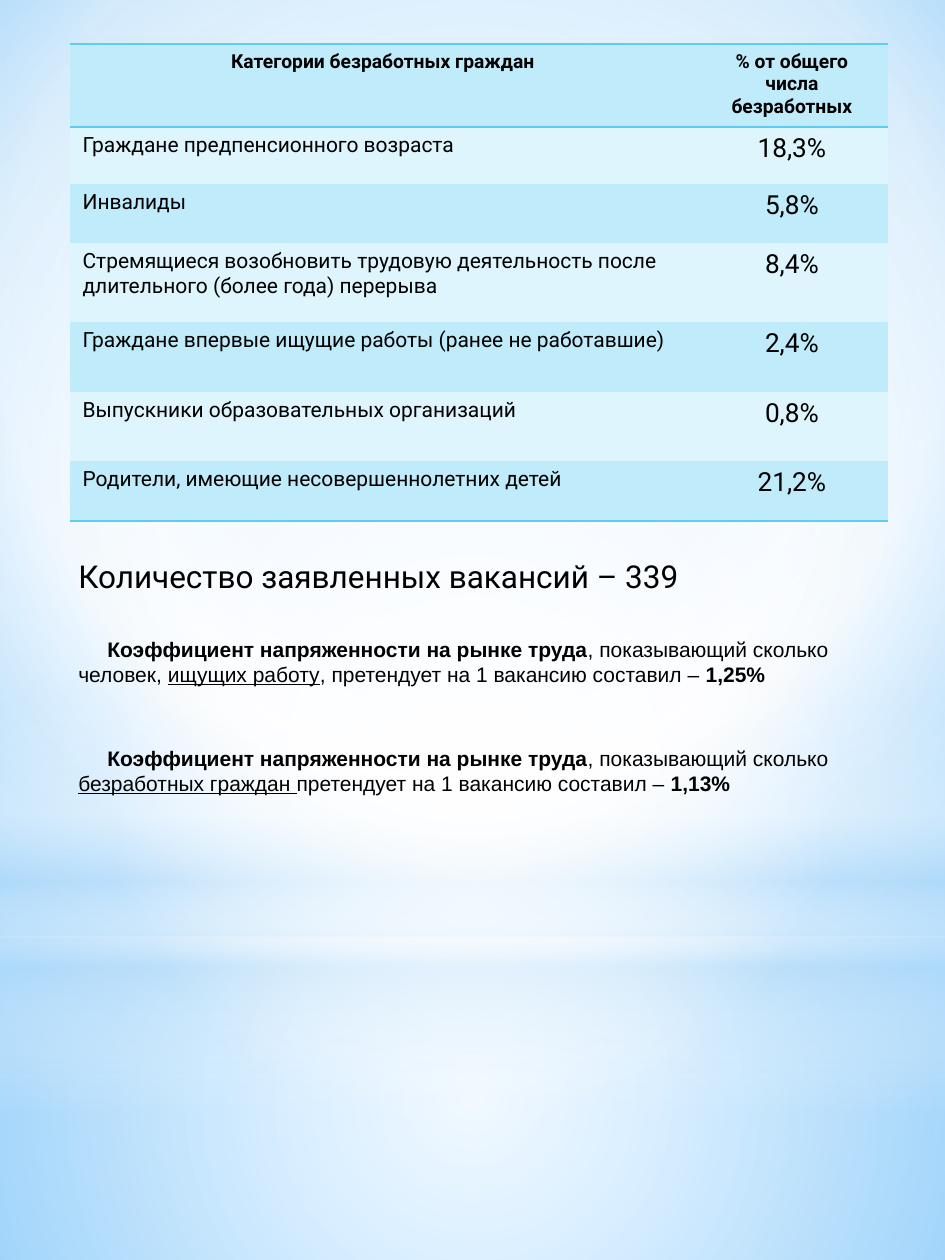
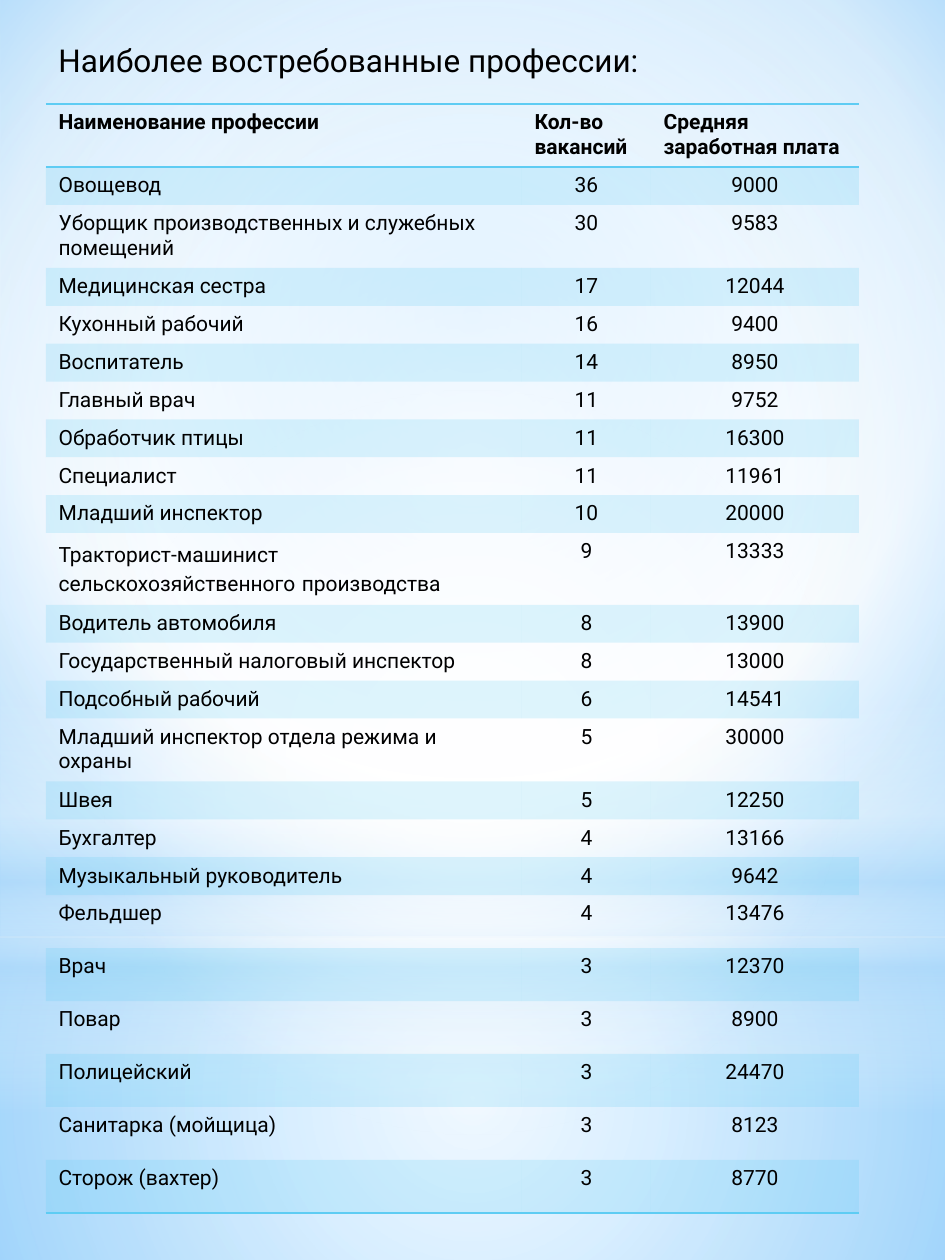
from dataclasses import dataclass

from lxml import etree
from pptx import Presentation
from pptx.dml.color import RGBColor
from pptx.enum.shapes import MSO_SHAPE
from pptx.enum.text import PP_ALIGN
from pptx.oxml.ns import qn
from pptx.util import Pt

RECT, OVAL = MSO_SHAPE.RECTANGLE, MSO_SHAPE.OVAL
LEFT, CENTER = PP_ALIGN.LEFT, PP_ALIGN.CENTER
NO_TABLE_STYLE = "{2D5ABB26-0587-4C30-8999-92F81FD0307C}"
BLANK_LAYOUT = 6
PX_PER_INCH = 126
SLIDE_W, SLIDE_H = 945, 1260


@dataclass(frozen=True)
class Theme:
    text: str = "000000"
    accent: str = "5ECCF3"
    band_dark: str = "BFEBFA"
    band_light: str = "DFF5FD"
    white: str = "FFFFFF"
    haze: str = "B4DCFA"
    sky: str = "9ED5FF"
    deep_sky: str = "5BB9FF"
    font: str = "Roboto"
    note_font: str = "Arial"
    heading: int = 18
    figure: int = 15
    body: int = 12
    small: int = 11


THEME = Theme()

# Gradient stops are (position %, colour, opacity %).
SKY_STOPS = [(0, THEME.sky, 100), (60, THEME.white, 100), (100, THEME.deep_sky, 100)]
SKY_FOCUS = (20, 10, 20, 60)
CENTRE_FOCUS = (50, 50, 50, 50)
BACKDROP = [
    (RECT, (0, 937, SLIDE_W, 323), CENTRE_FOCUS,
     [(0, THEME.white, 91), (37, THEME.white, 76), (100, THEME.haze, 79)]),
    (RECT, (0, 0, SLIDE_W, 937), CENTRE_FOCUS,
     [(0, THEME.white, 89), (48, THEME.white, 62), (100, THEME.haze, 79)]),
    (RECT, (0, 692, SLIDE_W, 420), None,
     [(0, THEME.white, 0), (29, THEME.white, 30), (45, THEME.haze, 40),
      (55, THEME.white, 26), (65, THEME.haze, 60), (100, THEME.white, 0)]),
    (OVAL, (0, 294, SLIDE_W, 937), CENTRE_FOCUS,
     [(0, THEME.white, 100), (56, THEME.white, 0)]),
]

UNEMPLOYED_HEADER = ("Категории безработных граждан", "% от общего числа безработных")
UNEMPLOYED = [
    ("Граждане предпенсионного возраста", "18,3%"),
    ("Инвалиды", "5,8%"),
    ("Стремящиеся возобновить трудовую деятельность после длительного "
     "(более года) перерыва", "8,4%"),
    ("Граждане впервые ищущие работы (ранее не работавшие)", "2,4%"),
    ("Выпускники образовательных организаций", "0,8%"),
    ("Родители, имеющие несовершеннолетних детей", "21,2%"),
]
UNEMPLOYED_HEIGHTS = [83, 57, 59, 79, 70, 69, 60]

VACANCIES = "Количество заявленных вакансий – 339"
BOLD, UNDERLINED = {"bold": True}, {"underline": True}
TENSION = ("Коэффициент напряженности на рынке труда", BOLD)
TENSION_NOTES = [
    ((66, 630, 816, 63),
     [TENSION, ", показывающий сколько человек, ", ("ищущих работу", UNDERLINED),
      ", претендует на 1 вакансию составил – ", ("1,25%", BOLD)]),
    ((66, 739, 833, 63),
     [TENSION, ", показывающий сколько ", ("безработных граждан ", UNDERLINED),
      "претендует на 1 вакансию составил – ", ("1,13%", BOLD)]),
]

PROFESSIONS_TITLE = "Наиболее востребованные профессии:"
PROFESSIONS_HEADER = ("Наименование профессии", "Кол-во вакансий", "Средняя заработная плата")
WIDE_SPACE = (" ", {"size": 14})
PROFESSIONS = [
    ("Овощевод", 36, 9000),
    ("Уборщик производственных и служебных помещений", 30, 9583),
    ("Медицинская сестра", 17, 12044),
    ("Кухонный рабочий", 16, 9400),
    ("Воспитатель", 14, 8950),
    ("Главный врач", 11, 9752),
    ("Обработчик птицы", 11, 16300),
    ("Специалист", 11, 11961),
    ("Младший инспектор", 10, 20000),
    (["Тракторист-машинист", WIDE_SPACE, "сельскохозяйственного", WIDE_SPACE,
      "производства"], 9, 13333),
    ("Водитель автомобиля", 8, 13900),
    ("Государственный налоговый инспектор", 8, 13000),
    ("Подсобный рабочий", 6, 14541),
    ("Младший инспектор отдела режима и охраны", 5, 30000),
    ("Швея", 5, 12250),
    ("Бухгалтер", 4, 13166),
    ("Музыкальный руководитель", 4, 9642),
    ("Фельдшер", 4, 13476),
    ("Врач", 3, 12370),
    ("Повар", 3, 8900),
    ("Полицейский", 3, 24470),
    ("Санитарка (мойщица)", 3, 8123),
    ("Сторож (вахтер)", 3, 8770),
]
LINE_ROW, TALL_ROW, TALL_ROWS = 37, 53, 6
WRAPPED_HEIGHTS = {0: 63, 2: 63, 10: 72, 14: 63}


def px(length):
    return round(length * 914400 / PX_PER_INCH)


def box(left, top, width, height):
    return px(left), px(top), px(width), px(height)


def add_color(parent, color, opacity=100):
    node = etree.SubElement(parent, qn("a:srgbClr"), val=color)
    if opacity < 100:
        etree.SubElement(node, qn("a:alpha"), val=str(opacity * 1000))


def set_gradient(holder, stops, focus):
    """Swap the holder's solid fill for a circular gradient, or a vertical one without focus."""
    gradient = etree.Element(qn("a:gradFill"), rotWithShape="1")
    stop_list = etree.SubElement(gradient, qn("a:gsLst"))
    for position, color, opacity in stops:
        stop = etree.SubElement(stop_list, qn("a:gs"), pos=str(position * 1000))
        add_color(stop, color, opacity)
    if focus:
        circle = etree.SubElement(gradient, qn("a:path"), path="circle")
        sides = {side: str(share * 1000) for side, share in zip("ltrb", focus)}
        etree.SubElement(circle, qn("a:fillToRect"), **sides)
    else:
        etree.SubElement(gradient, qn("a:lin"), ang="5400000", scaled="0")
    holder.replace(holder.find(qn("a:solidFill")), gradient)


def build_backdrop(layout, slide):
    """Draw the shared sky on the slide and move it to the layout."""
    for placeholder in list(layout.placeholders):
        layout.shapes.element.remove(placeholder.element)
    layout.background.fill.solid()
    set_gradient(layout.element.xpath(".//p:bgPr")[0], SKY_STOPS, SKY_FOCUS)
    for kind, place, focus, stops in BACKDROP:
        haze = slide.shapes.add_shape(kind, *box(*place))
        haze.shadow.inherit = False
        haze.line.fill.background()
        haze.fill.solid()
        set_gradient(haze.element.spPr, stops, focus)
        layout.shapes.element.append(haze.element)


def write_text(frame, content, align=LEFT, indent=0, **base):
    """Fill the frame from a string or a list of strings and (string, format) pairs."""
    frame.word_wrap = True
    paragraph = frame.paragraphs[0]
    paragraph.alignment = align
    if indent:
        paragraph.element.get_or_add_pPr().set("indent", str(px(indent))) if hasattr(
            paragraph, "element") else paragraph._p.get_or_add_pPr().set("indent", str(px(indent)))
    for part in content if isinstance(content, list) else [content]:
        words, own = part if isinstance(part, tuple) else (part, {})
        look = {"font": THEME.font, "size": THEME.body, **base, **own}
        run = paragraph.add_run()
        run.text = words
        run.font.name = look["font"]
        run.font.size = Pt(look["size"])
        run.font.bold = look.get("bold", False)
        run.font.underline = look.get("underline", False)
        run.font.color.rgb = RGBColor.from_string(THEME.text)


def add_text(slide, place, content, **look):
    write_text(slide.shapes.add_textbox(*box(*place)).text_frame, content, **look)


def fill_cell(cell, color, opacity=100):
    if color is None:
        cell.fill.background()
        return
    cell.fill.solid()
    solid = cell._tc.tcPr.find(qn("a:solidFill"))
    solid.clear()
    add_color(solid, color, opacity)


def rule_cell(cell, *edges):
    for index, edge in enumerate(edges):
        rule = etree.Element(qn(f"a:{edge}"), w=str(Pt(1)))
        add_color(etree.SubElement(rule, qn("a:solidFill")), THEME.accent)
        cell._tc.get_or_add_tcPr().insert(index, rule)


def add_banded_table(slide, corner, widths, heights, rows, fills, header_look, figure_size):
    """Fills are (header, odd row, even row), each a (colour, opacity) pair."""
    header_fill, *bands = fills
    place = box(*corner, sum(widths), sum(heights))
    frame = slide.shapes.add_table(len(rows), len(widths), *place)
    frame.element.xpath(".//a:tableStyleId")[0].text = NO_TABLE_STYLE
    table = frame.table
    table.first_row = table.horz_banding = False
    for column, width in zip(table.columns, widths):
        column.width = px(width)
    for r, (height, row) in enumerate(zip(heights, rows)):
        table.rows[r].height = px(height)
        for c, value in enumerate(row):
            cell = table.cell(r, c)
            if r == 0:
                look = {"bold": True, **header_look}
            elif c == 0:
                look = {}
            else:
                look = {"align": CENTER, "size": figure_size}
            content = str(value) if isinstance(value, int) else value
            write_text(cell.text_frame, content, **look)
            fill_cell(cell, *(bands[(r - 1) % 2] if r else header_fill))
            if r == 0:
                rule_cell(cell, "lnT", "lnB")
            elif r == len(rows) - 1:
                rule_cell(cell, "lnB")


def build_unemployment(slide):
    for place, note in TENSION_NOTES:
        add_text(slide, place, note, font=THEME.note_font, indent=29)
    add_text(slide, (66, 551, 833, 50), VACANCIES, size=THEME.heading)
    dark, light = (THEME.band_dark, 100), (THEME.band_light, 100)
    add_banded_table(
        slide, (70, 44), [626, 192], UNEMPLOYED_HEIGHTS, [UNEMPLOYED_HEADER, *UNEMPLOYED],
        (dark, light, dark), {"align": CENTER, "size": THEME.small}, THEME.figure)


def build_professions(slide):
    add_text(slide, (46, 35, 833, 50), PROFESSIONS_TITLE, size=THEME.heading)
    rows = [PROFESSIONS_HEADER, *PROFESSIONS]
    first_tall = len(rows) - TALL_ROWS
    heights = [TALL_ROW if r >= first_tall else WRAPPED_HEIGHTS.get(r, LINE_ROW)
               for r in range(len(rows))]
    clear, tint = (None,), (THEME.accent, 20)
    add_banded_table(slide, (46, 104), [476, 129, 208], heights, rows,
                     (clear, tint, clear), {}, THEME.body)


def main():
    deck = Presentation()
    deck.slide_width, deck.slide_height = px(SLIDE_W), px(SLIDE_H)
    layout = deck.slide_layouts[BLANK_LAYOUT]
    unemployment, professions = (deck.slides.add_slide(layout) for _ in range(2))
    build_backdrop(layout, unemployment)
    build_unemployment(unemployment)
    build_professions(professions)
    deck.save("out.pptx")


if __name__ == "__main__":
    main()
